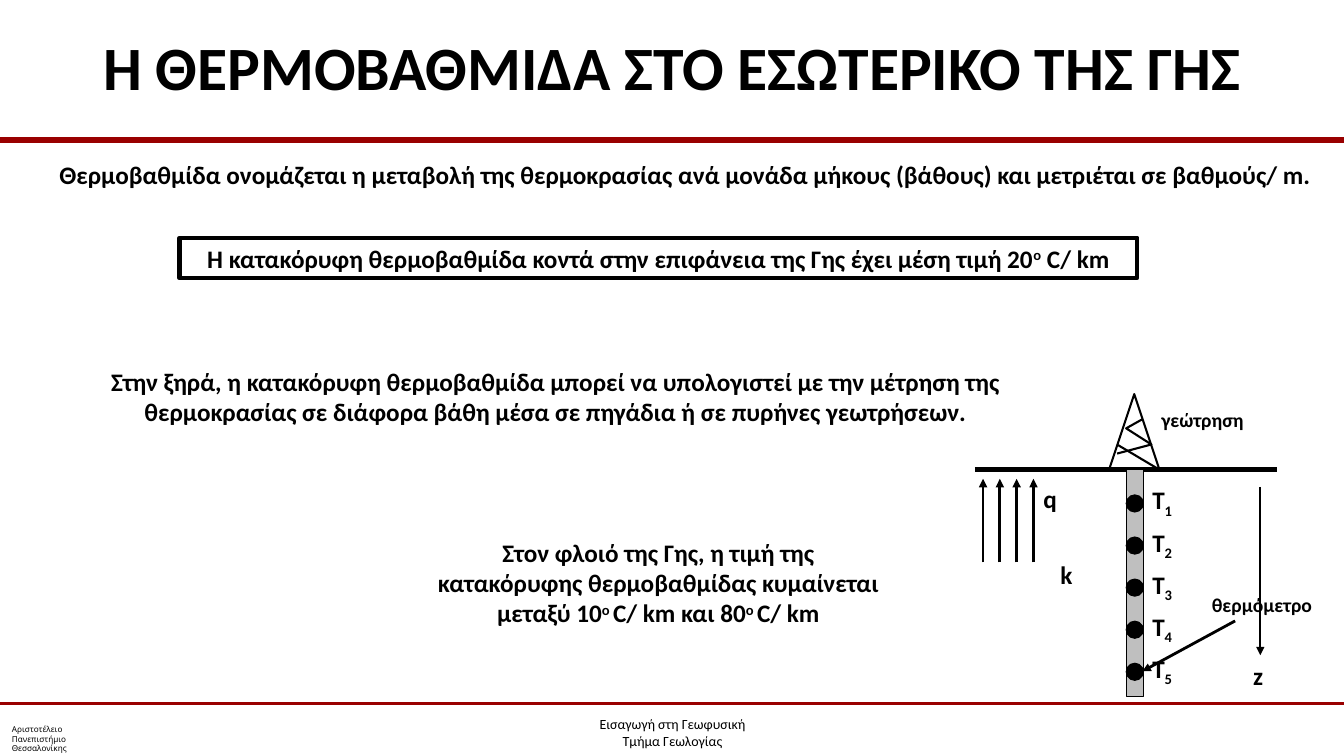
from dataclasses import dataclass

from lxml import etree
from pptx import Presentation
from pptx.dml.color import RGBColor
from pptx.enum.shapes import MSO_CONNECTOR, MSO_SHAPE
from pptx.enum.text import MSO_ANCHOR, PP_ALIGN
from pptx.oxml.ns import qn
from pptx.util import Inches, Pt


@dataclass(frozen=True)
class Theme:
    ink: RGBColor = RGBColor(0, 0, 0)
    rule: RGBColor = RGBColor(0x99, 0, 0)
    pipe: RGBColor = RGBColor(0xBF, 0xBF, 0xBF)
    font: str = "Calibri"
    logo_font: str = "League Spartan"
    title: float = 44
    body: float = 18
    label: float = 14
    footer: float = 10
    logo: float = 5.8


T = Theme()
SUP, SUB = 30, -25

TITLE = "Η ΘΕΡΜΟΒΑΘΜΙΔΑ ΣΤΟ ΕΣΩΤΕΡΙΚΟ ΤΗΣ ΓΗΣ"
UNIVERSITY = ["Αριστοτέλειο", "Πανεπιστήμιο", "Θεσσαλονίκης"]
COURSE = ["Εισαγωγή στη Γεωφυσική", "Τμήμα Γεωλογίας"]
DEFINITION = [("Θερμοβαθμίδα ονομάζεται η μεταβολή της θερμοκρασίας ανά μονάδα "
               "μήκους (βάθους) και μετριέται σε βαθμούς/ m.", 0)]
SURFACE = [("Η κατακόρυφη θερμοβαθμίδα κοντά στην επιφάνεια της Γης έχει μέση τιμή 20", 0),
           ("ο", SUP), (" C/ km", 0)]
LAND = [("Στην ξηρά, η κατακόρυφη θερμοβαθμίδα μπορεί να υπολογιστεί με την μέτρηση της "
         "θερμοκρασίας σε διάφορα βάθη μέσα σε πηγάδια ή σε πυρήνες γεωτρήσεων.", 0)]
CRUST = [("Στον φλοιό της Γης, η τιμή της κατακόρυφης θερμοβαθμίδας κυμαίνεται μεταξύ 10", 0),
         ("ο ", SUP), ("C/ km και 80", 0), ("ο ", SUP), ("C/ km", 0)]
LABELS = [
    ("γεώτρηση", T.label, (11.42, 4, 1.42, 0.33)),
    ("k", T.body, (10.42, 5.5, 0.5, 0.4)),
    ("q", T.body, (10.25, 4.75, 0.58, 0.4)),
    ("θερμόμετρο", T.label, (11.92, 5.83, 1.42, 0.33)),
    ("z", T.body, (12.33, 6.5, 0.75, 0.4)),
]
DERRICK = [
    [(11, 4.66), (11.25, 3.91), (11.5, 4.66), (11.08, 4.41)],
    [(11.08, 4.5), (11.42, 4.41), (11.17, 4.25), (11.33, 4.16)],
]
SENSORS = 5
SENSOR_STEP = 1.67 / 4
DOT = 0.17
HEAT_ARROWS = 4
HEAT_STEP = 0.5 / 3


def box(at):
    return [Inches(v) for v in at]


def style(p, size, font=T.font, bold=True, align=PP_ALIGN.LEFT):
    p.alignment = align
    for r in p.runs:
        r.font.name, r.font.size, r.font.bold = font, Pt(size), bold
        r.font.color.rgb = T.ink


def write(sp, runs, size=T.body, align=PP_ALIGN.LEFT):
    tf = sp.text_frame
    tf.word_wrap = True
    p = tf.paragraphs[0]
    for text, baseline in runs:
        r = p.add_run()
        r.text = text
        if baseline:
            r._r.get_or_add_rPr().set("baseline", str(baseline * 1000))
    style(p, size, align=align)


def textbox(shapes, at, runs, size=T.body, align=PP_ALIGN.LEFT):
    write(shapes.add_textbox(*box(at)), runs, size, align)


def lines_box(shapes, at, lines, size, font, align):
    tf = shapes.add_textbox(*box(at)).text_frame
    tf.word_wrap = True
    tf.text = "\n".join(lines)
    for p in tf.paragraphs:
        style(p, size, font, False, align)
    return tf


def outline(sp, width, fill=None):
    sp.shadow.inherit = False
    sp.line.color.rgb = T.ink
    sp.line.width = Pt(width)
    if fill is None:
        sp.fill.background()
    else:
        sp.fill.solid()
        sp.fill.fore_color.rgb = fill


def line(shapes, start, end, width, color=T.ink, arrow=False):
    c = shapes.add_connector(MSO_CONNECTOR.STRAIGHT, *box(start + end))
    c.line.color.rgb = color
    c.line.width = Pt(width)
    if arrow:
        etree.SubElement(c.line._get_or_add_ln(), qn("a:tailEnd"), type="triangle")
    etree.SubElement(c._element.spPr, qn("a:effectLst"))


def draw_frame(slide):
    shapes = slide.shapes
    line(shapes, (0, 1.39), (13.33, 1.39), 4, T.rule)
    line(shapes, (0, 6.98), (13.33, 6.98), 2, T.rule)
    tf = lines_box(shapes, (0.02, 7.16, 1.05, 0.34), UNIVERSITY, T.logo, T.logo_font, PP_ALIGN.LEFT)
    tf.vertical_anchor = MSO_ANCHOR.MIDDLE
    tf = lines_box(shapes, (4.57, 6.9, 4.2, 0.6), COURSE, T.footer, T.font, PP_ALIGN.CENTER)
    tf.margin_top = tf.margin_bottom = 0
    tf.paragraphs[0].line_spacing = 2.2

    title = shapes.title
    title.left, title.top, title.width, title.height = box((0.67, 0.03, 12, 1.25))
    title.text_frame.text = TITLE
    title.text_frame.vertical_anchor = MSO_ANCHOR.MIDDLE
    style(title.text_frame.paragraphs[0], T.title, align=PP_ALIGN.CENTER)


def draw_borehole(shapes):
    line(shapes, (9.67, 4.66), (12.67, 4.66), 3.5)
    pipe = shapes.add_shape(MSO_SHAPE.RECTANGLE, *box((11.17, 4.66, DOT, 2.25)))
    outline(pipe, 0.75, T.pipe)
    for i in range(SENSORS):
        drop = i * SENSOR_STEP
        dot = shapes.add_shape(MSO_SHAPE.OVAL, *box((11.17, 4.91 + drop, DOT, DOT)))
        outline(dot, 0.75, T.ink)
        textbox(shapes, (11.33, 4.76 + drop, 0.75, 0.4), [("T", 0), (str(i + 1), SUB)])
    line(shapes, (12.25, 6.16), (11.33, 6.66), 2, arrow=True)
    for points in DERRICK:
        start, *rest = [tuple(box(pt)) for pt in points]
        builder = shapes.build_freeform(*start)
        builder.add_line_segments(rest, close=False)
        outline(builder.convert_to_shape(), 1.5)
    for i in range(HEAT_ARROWS):
        x = 9.75 + i * HEAT_STEP
        line(shapes, (x, 5.58), (x, 4.75), 2, arrow=True)
    line(shapes, (12.5, 4.83), (12.5, 6.5), 1.5, arrow=True)
    for text, size, at in LABELS:
        textbox(shapes, at, [(text, 0)], size)


def main():
    prs = Presentation()
    prs.slide_width, prs.slide_height = Inches(13.33), Inches(7.5)
    slide = prs.slides.add_slide(prs.slide_layouts[5])
    draw_frame(slide)
    shapes = slide.shapes
    textbox(shapes, (0.49, 1.53, 12.67, 0.4), DEFINITION)
    frame = shapes.add_shape(MSO_SHAPE.RECTANGLE, *box((1.78, 2.36, 9.5, 0.4)))
    outline(frame, 3)
    write(frame, SURFACE, align=PP_ALIGN.CENTER)
    draw_borehole(shapes.add_group_shape().shapes)
    textbox(shapes, (0.6, 3.58, 9.82, 0.71), LAND, align=PP_ALIGN.CENTER)
    textbox(shapes, (4.17, 5.28, 4.72, 1.01), CRUST, align=PP_ALIGN.CENTER)
    prs.save("out.pptx")


if __name__ == "__main__":
    main()
